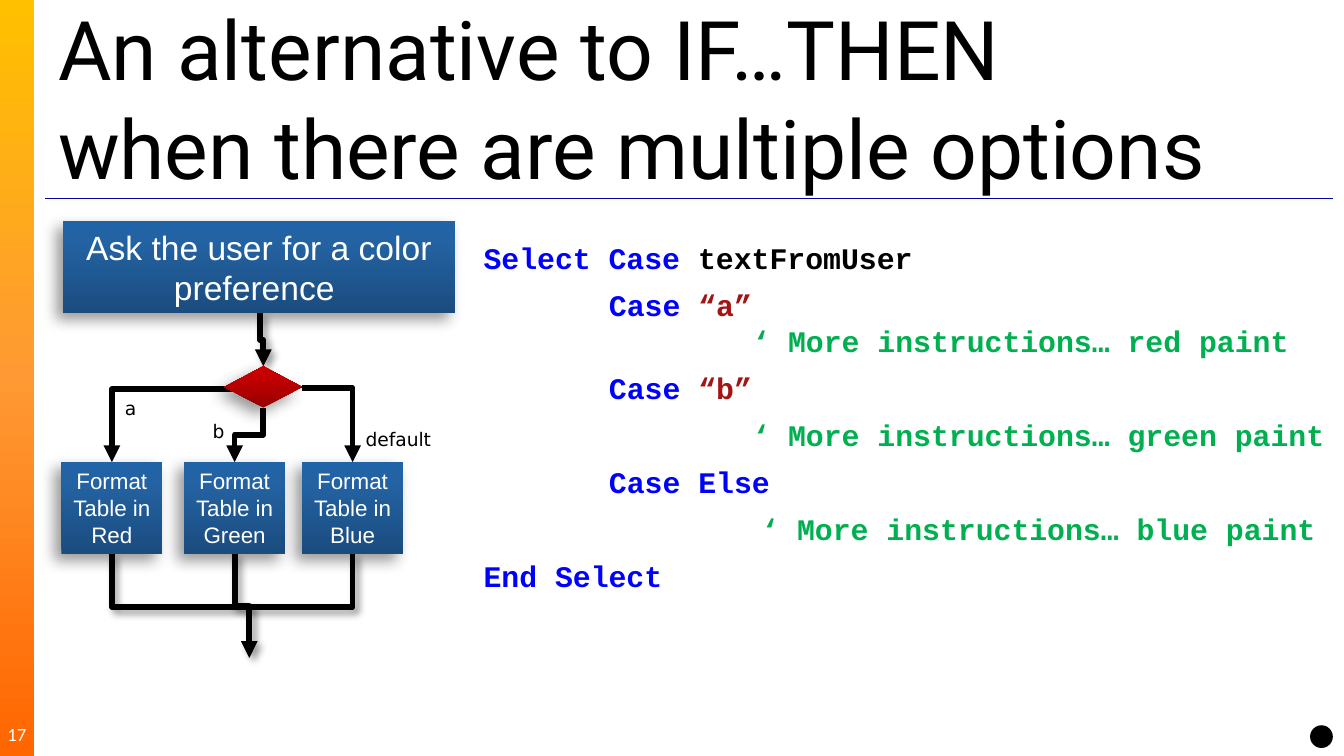
from dataclasses import dataclass

from lxml.etree import SubElement
from pptx import Presentation
from pptx.dml.color import RGBColor
from pptx.enum.shapes import MSO_CONNECTOR, MSO_SHAPE
from pptx.enum.text import MSO_ANCHOR, PP_ALIGN
from pptx.oxml.ns import qn
from pptx.util import Cm, Pt


@dataclass(frozen=True)
class Theme:
    black: str = "000000"
    white: str = "FFFFFF"
    rule: str = "0000A5"
    keyword: str = "0000FF"
    literal: str = "A31515"
    comment: str = "00B050"
    strip: tuple = ((0, "FFC000"), (50, "FF9933"), (100, "FF6600"))
    blue: tuple = ((0, "1B4C7E"), (80, "2363A3"), (100, "2063A6"))
    red: tuple = ((0, "980000"), (80, "C60000"), (100, "C70000"))
    title: float = 44
    ask: float = 18
    code: float = 16
    step: float = 12
    small: float = 10


@dataclass(frozen=True)
class Box:
    x: float
    y: float
    w: float
    h: float

    @property
    def center(self) -> float:
        return self.x + self.w / 2

    @property
    def bottom(self) -> float:
        return self.y + self.h

    def emu(self) -> tuple:
        return tuple(Cm(v) for v in (self.x, self.y, self.w, self.h))


@dataclass(frozen=True)
class Elbow:
    start: tuple
    end: tuple
    bends: int = 1
    vertical: bool = True
    arrow: bool = True
    shadow: bool = False


@dataclass(frozen=True)
class CodeLine:
    indent: float
    runs: tuple
    before: float = 6


T = Theme()


def put(obj, values: dict) -> None:
    for name, value in values.items():
        setattr(obj, name, value)


def add_gradient(sp, stops: tuple, angle: int) -> None:
    grad = SubElement(sp._element.spPr, qn("a:gradFill"), rotWithShape="1")
    gs_list = SubElement(grad, qn("a:gsLst"))
    for pos, color in stops:
        gs = SubElement(gs_list, qn("a:gs"), pos=str(pos * 1000))
        SubElement(gs, qn("a:srgbClr"), val=color)
    SubElement(grad, qn("a:lin"), ang=str(angle * 60000), scaled="0")


def add_effects(sp, shadow: tuple = ()) -> None:
    """Add an effect list, with a shadow given as blur, distance and angle."""
    effects = SubElement(sp._element.spPr, qn("a:effectLst"))
    if shadow:
        blur, dist, angle = shadow
        outer = SubElement(effects, qn("a:outerShdw"), blurRad=str(Pt(blur)), dist=str(Pt(dist)),
                           dir=str(angle * 60000), algn="ctr", rotWithShape="0")
        color = SubElement(outer, qn("a:srgbClr"), val=T.black)
        SubElement(color, qn("a:alpha"), val="40000")


def add_run(p, text: str, size: float, font: str, color: str, bold: bool = False) -> None:
    r = p.add_run()
    r.text = text
    put(r.font, {"size": Pt(size), "name": font, "bold": bold})
    r.font.color.rgb = RGBColor.from_string(color)


def set_frame(tf, anchor=MSO_ANCHOR.TOP, inset: tuple = (0.25, 0.13)) -> None:
    dx, dy = (Cm(v) for v in inset)
    put(tf, {"word_wrap": True, "vertical_anchor": anchor, "margin_left": dx,
             "margin_right": dx, "margin_top": dy, "margin_bottom": dy})


def add_shape(s, kind, box: Box, stops: tuple, angle: int = 270, shadow: tuple = (8, 5, 135)):
    sp = s.shapes.add_shape(kind, *box.emu())
    add_gradient(sp, stops, angle)
    sp.line.fill.background()
    add_effects(sp, shadow)
    return sp


def add_process(s, box: Box, text: str, size: float) -> None:
    tf = add_shape(s, MSO_SHAPE.FLOWCHART_PROCESS, box, T.blue).text_frame
    set_frame(tf, MSO_ANCHOR.MIDDLE, (0.13, 0.13))
    p = tf.paragraphs[0]
    p.alignment = PP_ALIGN.CENTER
    add_run(p, text, size, "Arial", T.white)


def add_text(s, box: Box, text: str, size: float, font: str, color: str = T.black,
             align=PP_ALIGN.LEFT, **frame) -> None:
    tf = s.shapes.add_textbox(*box.emu()).text_frame
    set_frame(tf, **frame)
    p = tf.paragraphs[0]
    p.alignment = align
    for i, line in enumerate(text.split("\n")):
        if i:
            p.add_line_break()
        add_run(p, line, size, font, color)


def add_line(s, kind, start: tuple, end: tuple, color: str, width: float):
    c = s.shapes.add_connector(kind, *(Cm(v) for v in start + end))
    c.line.color.rgb = RGBColor.from_string(color)
    c.line.width = Pt(width)
    return c


def add_elbow(s, e: Elbow) -> None:
    (x1, y1), (x2, y2) = e.start, e.end
    start, end = e.start, e.end
    if e.vertical:
        # Lay the box on its side around the midpoint, then turn it
        mx, my, w, h = (x1 + x2) / 2, (y1 + y2) / 2, y2 - y1, abs(x2 - x1)
        left, right = mx - w / 2, mx + w / 2
        if x2 > x1:
            left, right = right, left
        start, end = (left, my - h / 2), (right, my + h / 2)
    c = add_line(s, MSO_CONNECTOR.ELBOW, start, end, T.black, 3)
    sp_pr = c._element.spPr
    if e.vertical:
        sp_pr.find(qn("a:xfrm")).set("rot", str((270 if x2 > x1 else 90) * 60000))
    sp_pr.find(qn("a:prstGeom")).set("prst", f"bentConnector{e.bends + 1}")
    if e.arrow:
        SubElement(sp_pr.find(qn("a:ln")), qn("a:tailEnd"), type="triangle")
    add_effects(c, (4, 3, 45) if e.shadow else ())


def add_code(s, box: Box, lines: tuple) -> None:
    tf = s.shapes.add_textbox(*box.emu()).text_frame
    set_frame(tf)
    tf.margin_right = 0
    for i, line in enumerate(lines):
        p = tf.add_paragraph() if i else tf.paragraphs[0]
        p.space_before = Pt(line.before)
        p_pr = p._p.get_or_add_pPr()
        p_pr.set("marL", str(Cm(line.indent)))
        p_pr.set("indent", "0")
        for text, color in line.runs:
            add_run(p, text, T.code, "Courier New", color, True)


prs = Presentation()
put(prs, {"slide_width": Cm(25.4), "slide_height": Cm(14.28)})
s = prs.slides.add_slide(prs.slide_layouts[6])

# Side strip, title and rule
add_shape(s, MSO_SHAPE.RECTANGLE, Box(0, 0, 0.64, 14.28), T.strip, 90, ())
add_effects(add_line(s, MSO_CONNECTOR.STRAIGHT, (0.85, 3.75), (25.2, 3.75), T.rule, 0.75))
add_text(s, Box(0.85, 0.15, 24.33, 3.38), "An alternative to IF…THEN\nwhen there are multiple options",
         T.title, "Roboto", anchor=MSO_ANCHOR.MIDDLE)
add_text(s, Box(0, 13.49, 0.64, 0.76), "17", T.small, "Calibri", T.white, PP_ALIGN.CENTER,
         anchor=MSO_ANCHOR.MIDDLE, inset=(0, 0))

# Code listing
CASE, BODY = 2.37, 5.08
add_code(s, Box(8.89, 4.39, 16.51, 8.61), (
    CodeLine(0, (("Select Case", T.keyword), (" textFromUser", T.black))),
    CodeLine(CASE, (("Case ", T.keyword), ("“a”", T.literal))),
    CodeLine(BODY, (("‘ More instructions… red paint", T.comment),), 0),
    CodeLine(CASE, (("Case ", T.keyword), ("“b”", T.literal))),
    CodeLine(BODY, (("‘ More instructions… green paint", T.comment),)),
    CodeLine(CASE, (("Case Else", T.keyword),)),
    CodeLine(BODY + 0.17, (("‘ More instructions… blue paint", T.comment),)),
    CodeLine(0, (("End Select", T.keyword),)),
))

# Flowchart
ask = Box(1.19, 4.18, 7.41, 1.74)
choice = Box(4.24, 6.92, 1.47, 0.78)
red, green, blue = steps = [Box(x, 8.73, 1.91, 1.73) for x in (1.16, 3.48, 5.71)]
merge = (4.65, 11.47)
for e in (
    Elbow((4.91, ask.bottom), (choice.center, choice.y), 2, shadow=True),
    Elbow((green.center, green.bottom), (4.71, 12.43), 2, shadow=True),
    Elbow((red.center, red.bottom), merge, arrow=False, shadow=True),
    Elbow((blue.center, blue.bottom), merge, arrow=False, shadow=True),
    Elbow((4.55, 7.35), (red.center, red.y), vertical=False),
    Elbow((choice.center, choice.bottom), (green.center, green.y), 2),
    Elbow((choice.x + choice.w, 7.33), (blue.center, blue.y), vertical=False),
):
    add_elbow(s, e)
add_process(s, ask, "Ask the user for a color preference ", T.ask)
for box, name in zip(steps, ("Red", "Green", "Blue")):
    add_process(s, box, f"Format Table in {name}", T.step)
for text, x, y, w in (("a", 2.11, 7.36, 0.84), ("b", 3.77, 7.8, 0.84), ("default", 6.66, 7.95, 1.9)):
    add_text(s, Box(x, y, w, 0.69), text, T.small, "DejaVu Sans")
add_shape(s, MSO_SHAPE.FLOWCHART_DECISION, choice, T.red)

# Corner dot
dot = s.shapes.add_shape(MSO_SHAPE.OVAL, *Box(24.76, 13.7, 0.43, 0.43).emu())
dot.fill.solid()
dot.fill.fore_color.rgb = RGBColor.from_string(T.black)
dot.line.fill.background()
dot.shadow.inherit = False

prs.save("out.pptx")
